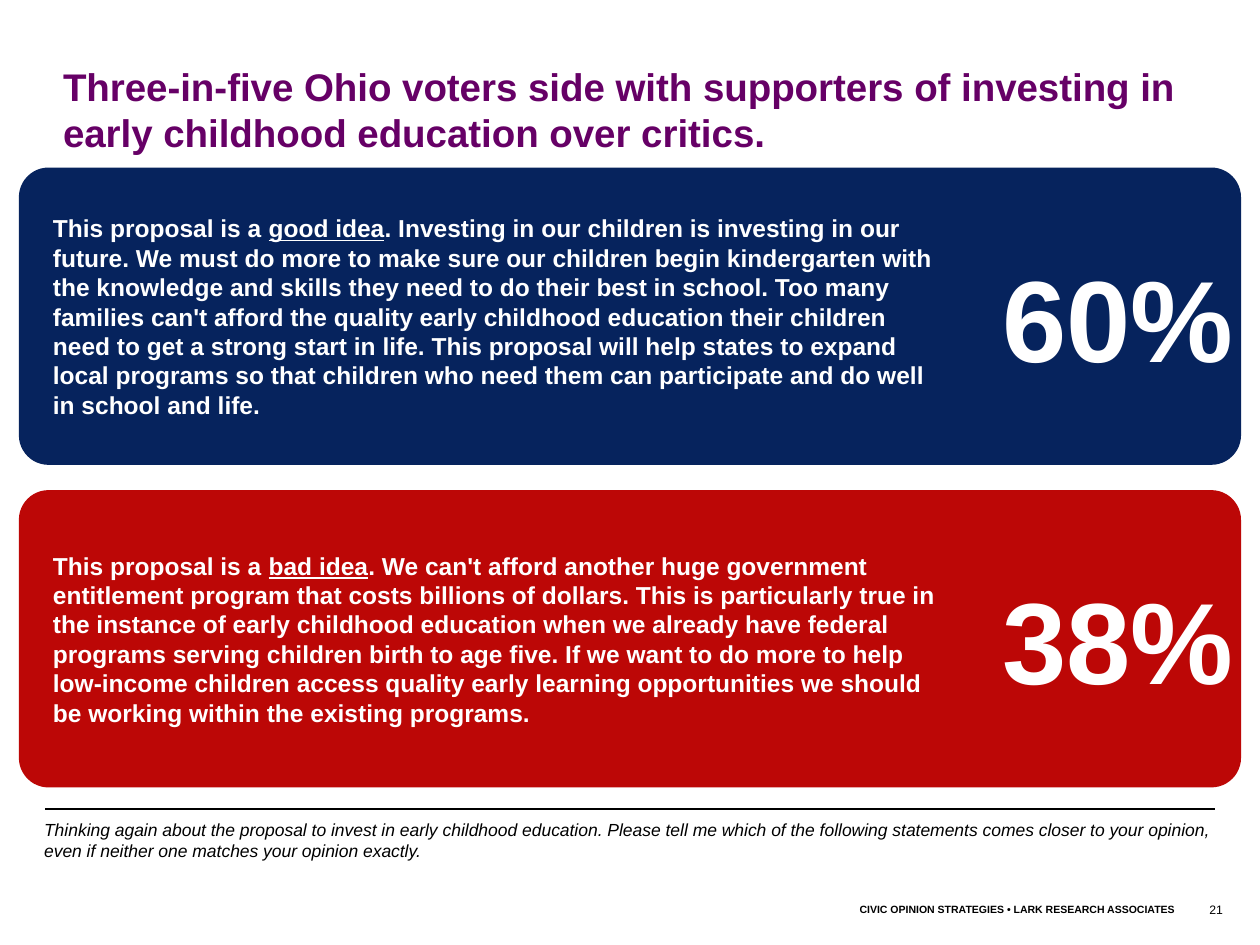
from dataclasses import dataclass

from lxml.etree import SubElement
from pptx import Presentation
from pptx.dml.color import RGBColor
from pptx.enum.shapes import MSO_CONNECTOR, MSO_SHAPE
from pptx.enum.text import MSO_ANCHOR, PP_ALIGN
from pptx.oxml.ns import qn
from pptx.util import Inches, Pt

COLORS = {"title": "660066", "good": "06235D", "bad": "BC0706",
          "white": "FFFFFF", "black": "000000"}
FONT = "Arial"
CARD_HEIGHT = 2.36
CARD_TOP, CARD_PITCH = 1.33, 2.56


@dataclass
class Opinion:
    verdict: str
    argument: str
    share: str
    color: str


OPINIONS = [
    Opinion("good idea",
            ". Investing in our children is investing in our future. We must do more to "
            "make sure our children begin kindergarten with the knowledge and skills they "
            "need to do their best in school. Too many families can't afford the quality "
            "early childhood education their children need to get a strong start in life. "
            "This proposal will help states to expand local programs so that children who "
            "need them can participate and do well in school and life.",
            "60%", "good"),
    Opinion("bad idea",
            ". We can't afford another huge government entitlement program that costs "
            "billions of dollars. This is particularly true in the instance of early "
            "childhood education when we already have federal programs serving children "
            "birth to age five. If we want to do more to help low-income children access "
            "quality early learning opportunities we should be working within the "
            "existing programs.",
            "38%", "bad"),
]


def rgb(name: str) -> RGBColor:
    return RGBColor.from_string(COLORS[name])


def write(frame, pieces: list[tuple[str, bool]], size: float, color: str,
          bold: bool = False, italic: bool = False, align=PP_ALIGN.LEFT,
          anchor=MSO_ANCHOR.TOP, margins: tuple[float, float] = (0, 0)) -> None:
    """Fill a frame with one paragraph of (text, underlined) pieces."""
    side, edge = (Inches(margin) for margin in margins)
    frame_format = {"word_wrap": True, "vertical_anchor": anchor,
                    "margin_left": side, "margin_right": side,
                    "margin_top": edge, "margin_bottom": edge}
    for key, value in frame_format.items():
        setattr(frame, key, value)
    paragraph = frame.paragraphs[0]
    paragraph.alignment = align
    for text, underlined in pieces:
        run = paragraph.add_run()
        run.text = text
        font_format = {"name": FONT, "size": Pt(size), "bold": bold,
                       "italic": italic, "underline": underlined}
        for key, value in font_format.items():
            setattr(run.font, key, value)
        run.font.color.rgb = rgb(color)


def add_text(slide, box: tuple[float, ...], pieces: list[tuple[str, bool]],
             size: float, color: str, **options) -> None:
    textbox = slide.shapes.add_textbox(*map(Inches, box))
    write(textbox.text_frame, pieces, size, color, **options)


def add_opinion(slide, opinion: Opinion, top: float) -> None:
    card = slide.shapes.add_shape(MSO_SHAPE.ROUNDED_RECTANGLE, Inches(0.15), Inches(top),
                                  Inches(9.7), Inches(CARD_HEIGHT))
    card.adjustments[0] = 0.1
    card.shadow.inherit = False
    card.fill.solid()
    card.fill.fore_color.rgb = rgb(opinion.color)
    card.line.fill.background()

    statement = [("This proposal is a ", False), (opinion.verdict, True),
                 (opinion.argument, False)]
    middle = top + CARD_HEIGHT / 2
    for left, width, height, pieces, size, align in (
            (0.42, 7.13, 1.65, statement, 14, PP_ALIGN.LEFT),
            (7.83, 2.08, 1.33, [(opinion.share, False)], 66, PP_ALIGN.CENTER)):
        add_text(slide, (left, middle - height / 2, width, height), pieces, size, "white",
                 bold=True, align=align, anchor=MSO_ANCHOR.MIDDLE)


def add_rule(slide, left: float, right: float, y: float) -> None:
    rule = slide.shapes.add_connector(MSO_CONNECTOR.STRAIGHT, Inches(left), Inches(y),
                                      Inches(right), Inches(y))
    rule.line.color.rgb = rgb("black")
    rule.line.width = Pt(0.75)
    SubElement(rule._element.spPr, qn("a:effectLst"))


def main() -> None:
    deck = Presentation()
    deck.slide_width, deck.slide_height = Inches(10), Inches(7.5)
    slide = deck.slides.add_slide(deck.slide_layouts[5])

    title = slide.shapes.title
    title_place = {"left": 0.5, "top": 0.5, "width": 8.98, "height": 0.74}
    for key, value in title_place.items():
        setattr(title, key, Inches(value))
    write(title.text_frame,
          [("Three-in-five Ohio voters side with supporters of investing in early "
            "childhood education over critics.", False)], 22, "title", bold=True)

    for index, opinion in enumerate(OPINIONS):
        add_opinion(slide, opinion, CARD_TOP + index * CARD_PITCH)

    add_rule(slide, 0.36, 9.64, 6.42)
    add_text(slide, (0.35, 6.5, 9.28, 0.34),
             [("Thinking again about the proposal to invest in early childhood education. "
               "Please tell me which of the following statements comes closer to your "
               "opinion, even if neither one matches your opinion exactly.", False)],
             10, "black", italic=True)
    add_text(slide, (5.92, 7.12, 3.5, 0.2),
             [("CIVIC OPINION STRATEGIES • LARK RESEARCH ASSOCIATES", False)], 6, "black",
             bold=True, align=PP_ALIGN.RIGHT, margins=(0.1, 0.05))
    add_text(slide, (9.5, 7.11, 0.5, 0.22), [("21", False)], 7, "black",
             margins=(0.1, 0.05))

    deck.save("out.pptx")


if __name__ == "__main__":
    main()
